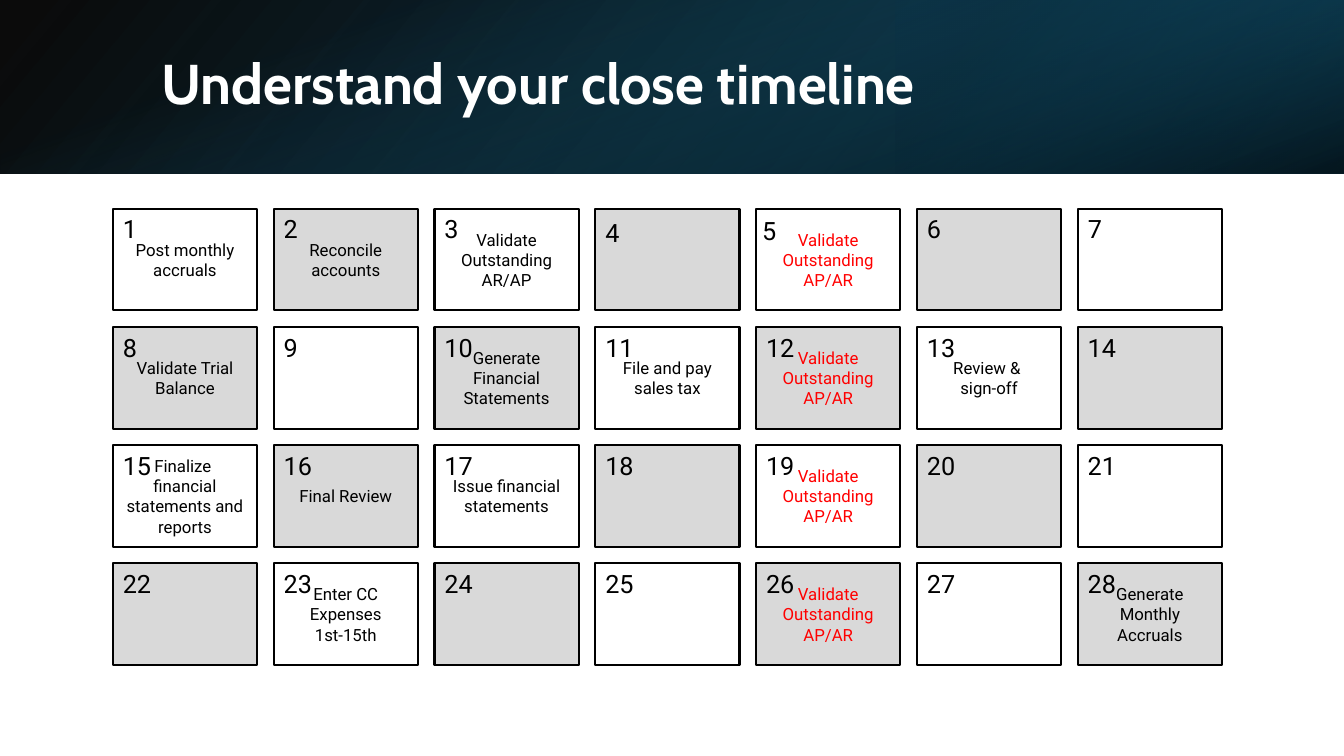
from pptx import Presentation
from pptx.dml.color import RGBColor
from pptx.enum.shapes import MSO_SHAPE
from pptx.enum.text import MSO_ANCHOR, MSO_AUTO_SIZE, PP_ALIGN
from pptx.oxml import parse_xml
from pptx.oxml.ns import nsdecls
from pptx.util import Inches, Pt

SLIDE_W, SLIDE_H = 13.33, 7.5
BAND_H = 1.72
DAYS_PER_WEEK, DAYS = 7, 28
OUTSTANDING = "Validate Outstanding AP/AR"
TASKS = {
    1: "Post monthly accruals",
    2: "Reconcile accounts",
    3: "Validate Outstanding AR/AP",
    5: OUTSTANDING,
    8: "Validate Trial Balance",
    10: "Generate Financial Statements",
    11: "File and pay sales tax",
    12: OUTSTANDING,
    13: "Review & \nsign-off",
    15: "Finalize \nfinancial statements and reports",
    16: "Final Review",
    17: "Issue financial statements",
    19: OUTSTANDING,
    23: "Enter CC Expenses 1st-15th",
    26: OUTSTANDING,
    28: "Generate Monthly Accruals",
}
NUMBER_NUDGES = {4: (0, 0.04), 5: (-0.04, 0.02)}


def rgb(color):
    return RGBColor.from_string(color)


class CloseCalendar:
    """Style, current slide and the calendar grid, in inches."""

    heading_font, body_font = "Cabin", "Roboto"
    black, white, grey, red = "000000", "FFFFFF", "D9D9D9", "FF0000"
    left, top = 1.12, 2.07
    col_step, row_step = 1.595, 1.173
    cell_w, cell_h = 1.43, 1.01

    def __init__(self, prs):
        self.s = prs.slides.add_slide(prs.slide_layouts[5])

    def cell_origin(self, day):
        row, col = divmod(day - 1, DAYS_PER_WEEK)
        return self.left + col * self.col_step, self.top + row * self.row_step

    def rect(self, x, y, w, h):
        sp = self.s.shapes.add_shape(
            MSO_SHAPE.RECTANGLE, Inches(x), Inches(y), Inches(w), Inches(h))
        sp.shadow.inherit = False
        return sp

    def style(self, p, size, color, font=body_font, bold=False):
        p.font.name, p.font.size, p.font.bold = font, Pt(size), bold
        p.font.color.rgb = rgb(color)

    def band(self, start, stops, angle, rotation=0, flip=True):
        """Header gradient from a share of the width to the right edge.

        Stops are (position, colour, opacity), both numbers in percent.
        """
        x, w, h = start * SLIDE_W, (1 - start) * SLIDE_W, BAND_H
        if rotation == 90:
            sp = self.rect(x + (w - h) / 2, (h - w) / 2, h, w)
        else:
            sp = self.rect(x, 0, w, h)
        sp.rotation = rotation
        sp.line.fill.background()
        sp.fill.gradient()
        spPr = sp._element.spPr
        if flip:
            spPr.xfrm.set("flipH", "1")
        stop_xml = "".join(
            f'<a:gs pos="{pos * 1000}"><a:srgbClr val="{color}">'
            f'<a:alpha val="{opacity * 1000}"/></a:srgbClr></a:gs>'
            for pos, color, opacity in stops)
        gradient = parse_xml(
            f'<a:gradFill {nsdecls("a")} rotWithShape="1"><a:gsLst>{stop_xml}'
            f'</a:gsLst><a:lin ang="{angle * 60000}" scaled="0"/></a:gradFill>')
        spPr.replace(spPr.gradFill, gradient)

    def title(self, text):
        sp = self.s.shapes.title
        self.s.shapes._spTree.append(sp._element)  # in front of the bands
        sp.left, sp.top = Inches(1.5), Inches(0.38)
        sp.width, sp.height = Inches(10.98), Inches(0.96)
        tf = sp.text_frame
        tf.auto_size = MSO_AUTO_SIZE.NONE
        tf.vertical_anchor = MSO_ANCHOR.MIDDLE
        p = tf.paragraphs[0]
        p.text, p.alignment, p.line_spacing = text, PP_ALIGN.LEFT, 0.9
        self.style(p, 40, self.white, self.heading_font, True)

    def day_cell(self, day, task):
        sp = self.rect(*self.cell_origin(day), self.cell_w, self.cell_h)
        sp.fill.solid()
        sp.fill.fore_color.rgb = rgb(self.white if day % 2 else self.grey)
        sp.line.color.rgb, sp.line.width = rgb(self.black), Pt(1.5)
        if task:
            tf = sp.text_frame
            tf.word_wrap, tf.vertical_anchor = True, MSO_ANCHOR.MIDDLE
            p = tf.paragraphs[0]
            p.text, p.alignment = task, PP_ALIGN.CENTER
            self.style(p, 12, self.red if task == OUTSTANDING else self.black)

    def day_number(self, day):
        x, y = self.cell_origin(day)
        dx, dy = NUMBER_NUDGES.get(day, (0, 0))
        sp = self.s.shapes.add_textbox(
            Inches(x + dx), Inches(y + dy),
            Inches(0.39 if day < 10 else 0.57), Inches(0.4))
        tf = sp.text_frame
        tf.word_wrap, tf.auto_size = False, MSO_AUTO_SIZE.SHAPE_TO_FIT_TEXT
        p = tf.paragraphs[0]
        p.text = str(day)
        self.style(p, 18, self.black)


def main():
    prs = Presentation()
    prs.slide_width, prs.slide_height = Inches(SLIDE_W), Inches(SLIDE_H)
    calendar = CloseCalendar(prs)

    calendar.band(0, [(0, "000000", 96), (100, "104862", 100)], 140)
    calendar.band(2 / 3, [(19, "0B3041", 68), (100, "156082", 79)], 320, 180)
    calendar.band(0, [(23, "156082", 0), (99, "000000", 74)], 340, 90, False)
    calendar.title("Understand your close timeline")

    for day in range(1, DAYS + 1):
        calendar.day_cell(day, TASKS.get(day))
    for day in range(1, DAYS + 1):
        calendar.day_number(day)

    prs.save("out.pptx")


if __name__ == "__main__":
    main()
